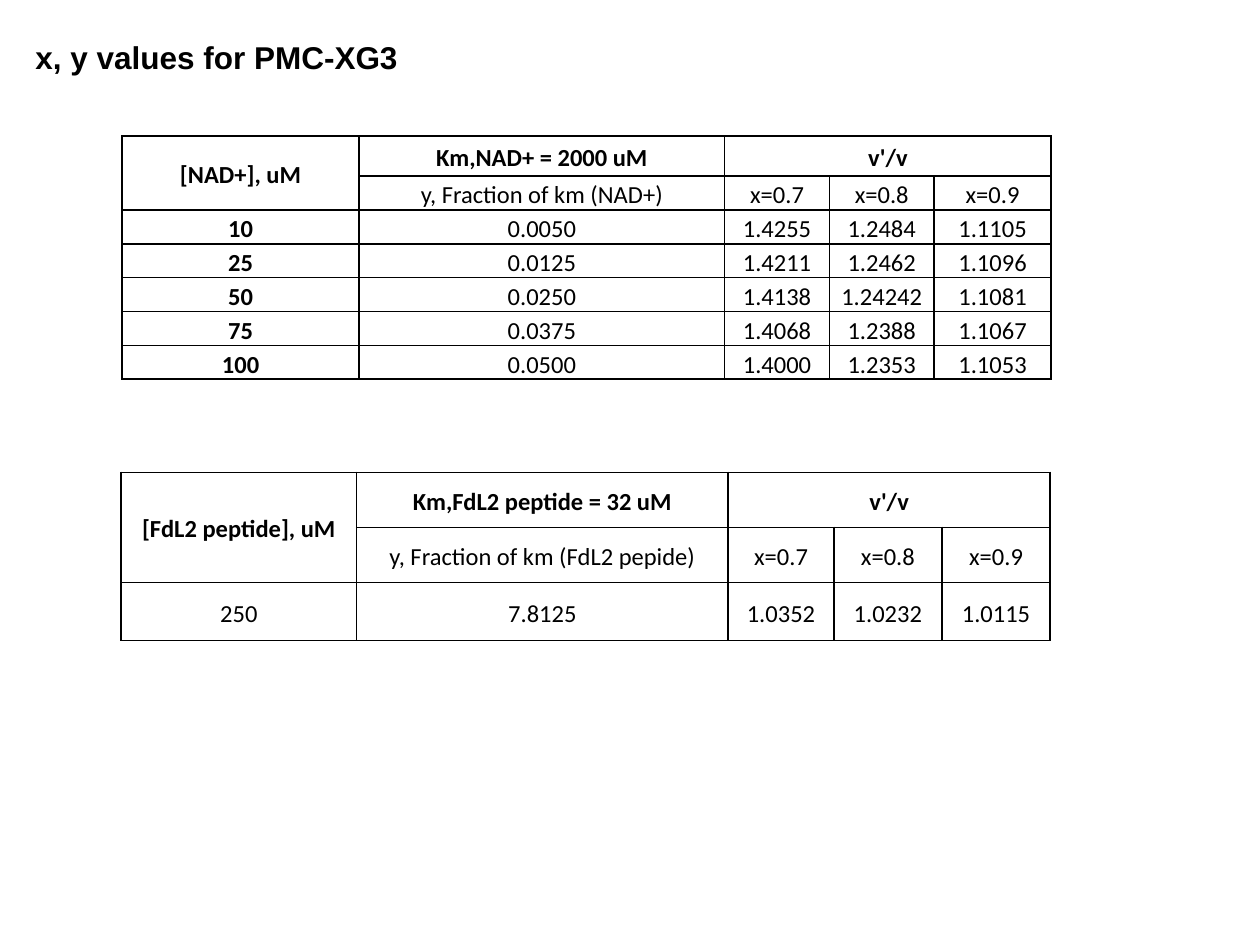
from lxml.etree import SubElement
from pptx import Presentation
from pptx.dml.color import RGBColor
from pptx.enum.text import MSO_ANCHOR, MSO_AUTO_SIZE, PP_ALIGN
from pptx.oxml.ns import qn
from pptx.util import Cm, Pt

BLACK = "000000"


def add_run(paragraph, text, font, size, bold):
    run = paragraph.add_run()
    run.text = text
    run.font.name = font
    run.font.size = Pt(size)
    run.font.bold = bold
    run.font.color.rgb = RGBColor.from_string(BLACK)


def add_borders(cell):
    properties = cell._tc.get_or_add_tcPr()
    for position, side in enumerate(("a:lnL", "a:lnR", "a:lnT", "a:lnB")):
        line = SubElement(properties, qn(side), w=str(Pt(1)))
        fill = SubElement(line, qn("a:solidFill"))
        SubElement(fill, qn("a:srgbClr"), val=BLACK)
        properties.insert(position, line)


prs = Presentation()
prs.slide_width, prs.slide_height = Cm(25.4), Cm(19.05)
slide = prs.slides.add_slide(prs.slide_layouts[5])

title = slide.shapes.title
title.left, title.top, title.width, title.height = Cm(0.46), Cm(0.64), Cm(8.08), Cm(1.02)
title.text_frame.word_wrap = False
title.text_frame.auto_size = MSO_AUTO_SIZE.SHAPE_TO_FIT_TEXT
title.text_frame.vertical_anchor = MSO_ANCHOR.TOP
heading = title.text_frame.paragraphs[0]
heading.alignment = PP_ALIGN.LEFT
add_run(heading, "x, y values for PMC-XG3", "Arial", 18, True)

x_values = ["x=0.7", "x=0.8", "x=0.9"]
peptide = {
    "left": 2.44, "top": 9.52, "bold_first": False,
    "widths": [4.75, 7.49, 2.13, 2.18, 2.18],
    "heights": [1.11, 1.11, 1.17],
    "rows": [
        ["[FdL2 peptide], uM", "Km,FdL2 peptide = 32 uM", "v'/v", "", ""],
        ["", "y, Fraction of km (FdL2 pepide)", *x_values],
        ["250", "7.8125", "1.0352", "1.0232", "1.0115"],
    ],
}
nad = {
    "left": 2.46, "top": 2.74, "bold_first": True,
    "widths": [4.78, 7.37, 2.11, 2.11, 2.36],
    "heights": [0.81] + [0.68] * 6,
    "rows": [
        ["[NAD+], uM", "Km,NAD+ = 2000 uM", "v'/v", "", ""],
        ["", "y, Fraction of km (NAD+)", *x_values],
        ["10", "0.0050", "1.4255", "1.2484", "1.1105"],
        ["25", "0.0125", "1.4211", "1.2462", "1.1096"],
        ["50", "0.0250", "1.4138", "1.24242", "1.1081"],
        ["75", "0.0375", "1.4068", "1.2388", "1.1067"],
        ["100", "0.0500", "1.4000", "1.2353", "1.1053"],
    ],
}

for kinetics in (peptide, nad):
    rows, widths, heights = kinetics["rows"], kinetics["widths"], kinetics["heights"]
    grid = slide.shapes.add_table(
        len(rows), len(widths), Cm(kinetics["left"]), Cm(kinetics["top"]),
        Cm(sum(widths)), Cm(sum(heights))).table
    for column, width in zip(grid.columns, widths):
        column.width = Cm(width)
    for row, height in zip(grid.rows, heights):
        row.height = Cm(height)
    grid.cell(0, 0).merge(grid.cell(1, 0))
    grid.cell(0, 2).merge(grid.cell(0, 4))

    for r, values in enumerate(rows):
        for c, value in enumerate(values):
            cell = grid.cell(r, c)
            cell.fill.background()
            add_borders(cell)
            cell.vertical_anchor = MSO_ANCHOR.MIDDLE
            cell.margin_left = cell.margin_right = Cm(0.18)
            cell.margin_top = cell.margin_bottom = Cm(0)
            if value:
                entry = cell.text_frame.paragraphs[0]
                entry.alignment = PP_ALIGN.CENTER
                entry.line_spacing = 1.15
                bold = r == 0 or (c == 0 and kinetics["bold_first"])
                add_run(entry, value, "Calibri", 14, bold)

prs.save("out.pptx")
